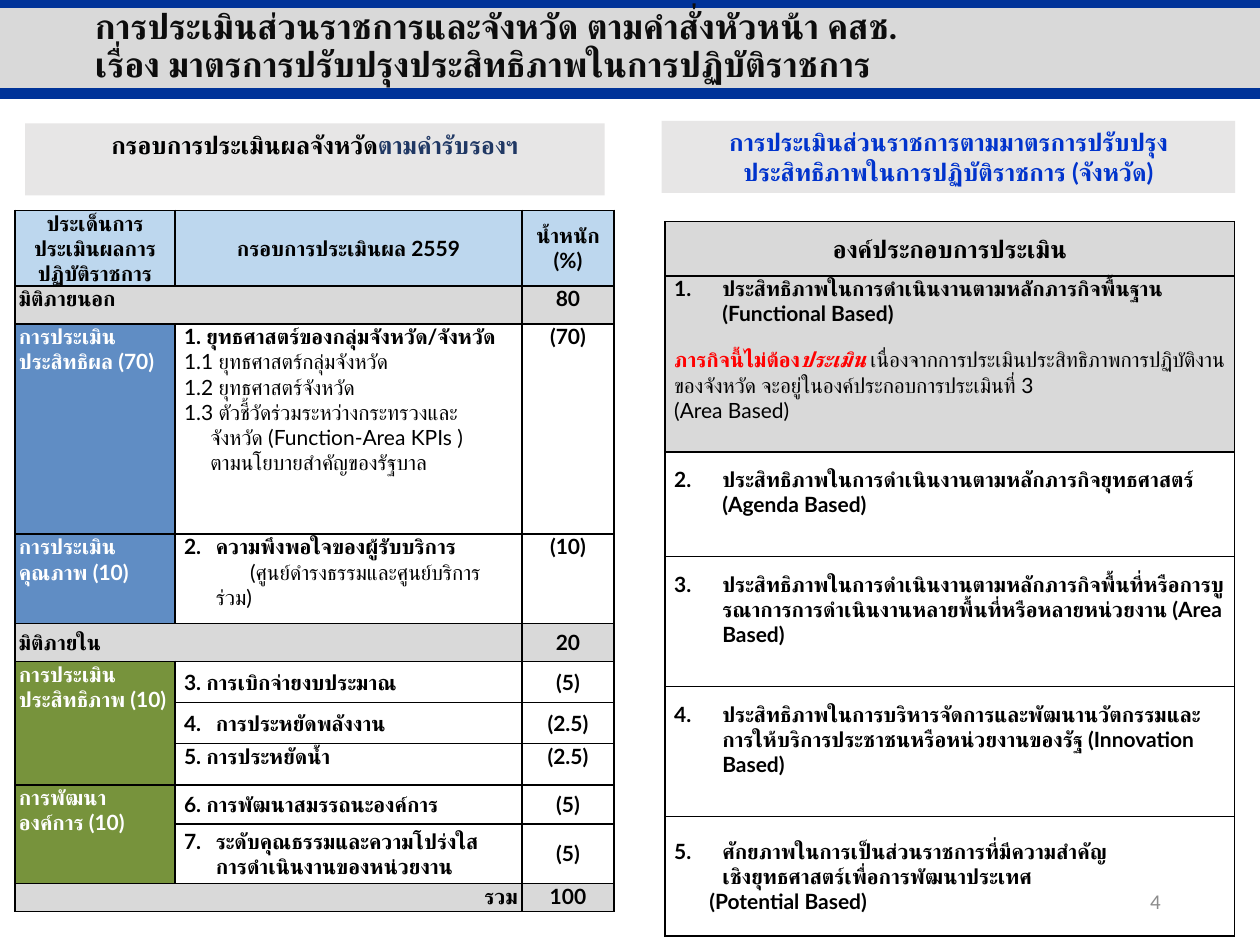
from lxml.etree import SubElement
from pptx import Presentation
from pptx.dml.color import RGBColor
from pptx.enum.shapes import MSO_CONNECTOR, MSO_SHAPE
from pptx.enum.text import MSO_ANCHOR, PP_ALIGN
from pptx.oxml.ns import qn
from pptx.util import Cm, Pt

BLACK = RGBColor(0x00, 0x00, 0x00)
WHITE = RGBColor(0xFF, 0xFF, 0xFF)
INK = RGBColor(0x0D, 0x0D, 0x0D)
RED = RGBColor(0xFF, 0x00, 0x00)
BAND_GREY = RGBColor(0xD9, 0xD9, 0xD9)
BOX_GREY = RGBColor(0xE7, 0xE6, 0xE6)
NUMBER_GREY = RGBColor(0x8C, 0x8C, 0x8C)
RULE_BLUE = RGBColor(0x00, 0x33, 0x99)
TITLE_BLUE = RGBColor(0x00, 0x33, 0xCC)
NAVY = RGBColor(0x20, 0x38, 0x64)
HEADER_BLUE = RGBColor(0xBD, 0xD7, 0xEE)
SIDE_BLUE = RGBColor(0x60, 0x8D, 0xC4)
SIDE_GREEN = RGBColor(0x77, 0x93, 0x3C)

TOP, MIDDLE = MSO_ANCHOR.TOP, MSO_ANCHOR.MIDDLE
LEFT, CENTER, RIGHT = PP_ALIGN.LEFT, PP_ALIGN.CENTER, PP_ALIGN.RIGHT
NARROW, WIDE = 0.08, 0.18


class SlideBuilder:
    font_name = "Lato"
    border_width = Pt(1)

    def __init__(self, slide):
        self.slide = slide

    def set_text(self, text_frame, items, size=12, color=BLACK, bold=True, align=LEFT):
        """Fill a frame; an item is a string or a dict with text and overrides.

        A dict may hold left, indent, number, before, bold, color, and more
        runs as (text, color, bold, italic).
        """
        for index, item in enumerate(items):
            item = item if isinstance(item, dict) else {"text": item}
            paragraph = text_frame.add_paragraph() if index else text_frame.paragraphs[0]
            paragraph.text = item["text"]
            paragraph.alignment = align
            if "before" in item:
                paragraph.space_before = Pt(item["before"])
            self.indent(paragraph, item)
            if not paragraph.runs:
                paragraph.add_run()
            for run in paragraph.runs:
                self.format_run(run, size, item.get("color", color), item.get("bold", bold))
            for text, run_color, run_bold, italic in item.get("more", []):
                run = paragraph.add_run()
                run.text = text
                self.format_run(run, size, run_color, run_bold, italic)
            for line_break in paragraph._p.findall(qn("a:br")):
                SubElement(line_break, qn("a:rPr")).set("sz", str(size * 100))

    def indent(self, paragraph, item):
        properties = paragraph._p.get_or_add_pPr()
        properties.set("marL", str(Cm(item.get("left", 0))))
        properties.set("indent", str(Cm(item.get("indent", 0))))
        if "number" in item:
            SubElement(properties, qn("a:buFont")).set("typeface", "Arial")
            numbering = SubElement(properties, qn("a:buAutoNum"))
            numbering.set("type", "arabicPeriod")
            numbering.set("startAt", str(item["number"]))

    def format_run(self, run, size, color, bold, italic=False):
        run.font.size = Pt(size)
        run.font.bold = bold
        run.font.italic = italic
        run.font.color.rgb = color
        run.font.name = self.font_name
        SubElement(run.font._element, qn("a:cs")).set("typeface", self.font_name)

    def title(self, text, left, top, width, height):
        title = self.slide.shapes.title
        title.left, title.top, title.width, title.height = map(Cm, (left, top, width, height))
        title.text_frame.vertical_anchor = MIDDLE
        self.set_text(title.text_frame, [{"text": text, "left": 0.97}], size=20, color=INK)
        title.text_frame.paragraphs[0].line_spacing = 0.9
        title.element.getparent().append(title.element)  # in front of the band

    def box(self, left, top, width, height, fill, items=()):
        shape = self.slide.shapes.add_shape(
            MSO_SHAPE.RECTANGLE, *map(Cm, (left, top, width, height)))
        shape.shadow.inherit = False
        shape.fill.solid()
        shape.fill.fore_color.rgb = fill
        shape.line.fill.background()
        shape.text_frame.word_wrap = True
        shape.text_frame.vertical_anchor = TOP
        if items:
            self.set_text(shape.text_frame, items, size=14, align=CENTER)

    def rule(self, top):
        line = self.slide.shapes.add_connector(
            MSO_CONNECTOR.STRAIGHT, Cm(0), Cm(top), Cm(25.4), Cm(top))
        line.line.color.rgb = RULE_BLUE
        line.line.width = Pt(6)
        SubElement(line._element.spPr, qn("a:effectLst"))

    def page_number(self, text, left, top, width, height):
        shape = self.slide.shapes.add_textbox(*map(Cm, (left, top, width, height)))
        shape.text_frame.word_wrap = True
        shape.text_frame.vertical_anchor = MIDDLE
        self.set_text(shape.text_frame, [text], color=NUMBER_GREY, bold=False, align=RIGHT)
        shape.text_frame.paragraphs[0].runs[0].font.name = "Calibri"

    def table(self, left, top, columns, rows):
        table = self.slide.shapes.add_table(
            len(rows), len(columns), Cm(left), Cm(top),
            Cm(sum(columns)), Cm(sum(rows))).table
        for column, width in zip(table.columns, columns):
            column.width = Cm(width)
        for row, height in zip(table.rows, rows):
            row.height = Cm(height)
        return table

    def cell(self, cell, items, fill=None, anchor=TOP, margin=WIDE, bottom=0,
             sides="LRTB", **style):
        cell.margin_left = cell.margin_right = Cm(margin)
        cell.margin_top, cell.margin_bottom = Cm(0), Cm(bottom)
        cell.vertical_anchor = anchor
        self.borders(cell, sides)
        if fill is None:
            cell.fill.background()
        else:
            cell.fill.solid()
            cell.fill.fore_color.rgb = fill
        self.set_text(cell.text_frame, items, **style)

    def borders(self, cell, sides):
        properties = cell._tc.get_or_add_tcPr()
        for side in "LRTB":
            line = SubElement(properties, qn(f"a:ln{side}"), w=str(self.border_width))
            if side in sides:
                fill = SubElement(line, qn("a:solidFill"))
                SubElement(fill, qn("a:srgbClr")).set("val", str(BLACK))
            else:
                SubElement(line, qn("a:noFill"))


def numbered(number, text, hanging):
    return {"text": text, "number": number, "left": hanging, "indent": -hanging}


def province_table(builder):
    table = builder.table(0.3, 4.24, [3.23, 6.99, 1.86],
                          [1.52, 0.56, 4.24, 1.8, 0.56, 0.83, 0.83, 0.83, 0.79, 1.2, 0.56])
    for first, last in [((5, 0), (7, 0)), ((8, 0), (9, 0)), ((10, 0), (10, 1))]:
        table.cell(*first).merge(table.cell(*last))

    headers = [["ประเด็นการประเมินผลการปฏิบัติราชการ"], ["กรอบการประเมินผล 2559"],
               ["น้ำหนัก", "(%)"]]
    for column, items in enumerate(headers):
        builder.cell(table.cell(0, column), items, HEADER_BLUE, MIDDLE, NARROW, align=CENTER)

    for row, text, weight, anchor in [(1, "มิติภายนอก", "80", TOP),
                                      (4, "มิติภายใน", "20", MIDDLE)]:
        builder.cell(table.cell(row, 0), [text], BAND_GREY, anchor, NARROW, sides="LTB")
        builder.cell(table.cell(row, 1), [""], BAND_GREY, sides="RTB")
        builder.cell(table.cell(row, 2), [weight], BAND_GREY, anchor, NARROW, align=CENTER)

    for row, text, fill in [(2, "การประเมินประสิทธิผล (70)", SIDE_BLUE),
                            (3, "การประเมินคุณภาพ (10)", SIDE_BLUE),
                            (5, "การประเมินประสิทธิภาพ (10)", SIDE_GREEN),
                            (8, "การพัฒนาองค์การ (10)", SIDE_GREEN)]:
        builder.cell(table.cell(row, 0), [text], fill, margin=NARROW, color=WHITE)

    strategies = ["1. ยุทธศาสตร์ของกลุ่มจังหวัด/จังหวัด"]
    strategies += [{"text": text, "left": left, "bold": False} for text, left in [
        ("1.1 ยุทธศาสตร์กลุ่มจังหวัด", 0),
        ("1.2 ยุทธศาสตร์จังหวัด", 0),
        ("1.3 ตัวชี้วัดร่วมระหว่างกระทรวงและ", 0),
        ("จังหวัด (Function-Area KPIs )", 0.53),
        ("ตามนโยบายสำคัญของรัฐบาล", 0.53)]]
    satisfaction = [numbered(2, "ความพึงพอใจของผู้รับบริการ", 0.64),
                    {"text": "(ศูนย์ดำรงธรรมและศูนย์บริการร่วม)", "left": 0.64,
                     "indent": 0.69, "bold": False}]
    integrity = "ระดับคุณธรรมและความโปร่งใส\nการดำเนินงานของหน่วยงาน"
    for row, items, weight, anchor in [
            (2, strategies, "(70)", TOP),
            (3, satisfaction, "(10)", TOP),
            (5, ["3. การเบิกจ่ายงบประมาณ"], "(5)", MIDDLE),
            (6, [numbered(4, "การประหยัดพลังงาน", 0.64)], "(2.5)", MIDDLE),
            (7, ["5. การประหยัดน้ำ"], "(2.5)", TOP),
            (8, ["6. การพัฒนาสมรรถนะองค์การ"], "(5)", MIDDLE),
            (9, [numbered(7, integrity, 0.64)], "(5)", MIDDLE)]:
        builder.cell(table.cell(row, 1), items, WHITE, anchor)
        builder.cell(table.cell(row, 2), [weight], WHITE, anchor, align=CENTER)

    builder.cell(table.cell(10, 0), ["รวม"], BAND_GREY, margin=NARROW, align=RIGHT)
    builder.cell(table.cell(10, 2), ["100"], BAND_GREY, margin=NARROW, align=CENTER)


def component_table(builder):
    table = builder.table(13.41, 4.47, [11.48], [1.09, 3.55, 2.11, 2.62, 2.62, 2.41])
    builder.cell(table.cell(0, 0), ["องค์ประกอบการประเมิน"], BAND_GREY, MIDDLE,
                 size=14, align=CENTER)
    exempt = {"text": "ภารกิจนี้ไม่ต้อง", "color": RED, "before": 12, "more": [
        ("ประเมิน ", RED, True, True),
        ("เนื่องจากการประเมินประสิทธิภาพการปฏิบัติงานของจังหวัด "
         "จะอยู่ในองค์ประกอบการประเมินที่ 3", BLACK, False, False)]}
    functional = "ประสิทธิภาพในการดำเนินงานตามหลักภารกิจพื้นฐาน (Functional Based)"
    builder.cell(table.cell(1, 0), [numbered(1, functional, 0.97), exempt,
                                    {"text": "(Area Based)", "bold": False}], BAND_GREY)

    potential = "ศักยภาพในการเป็นส่วนราชการที่มีความสำคัญ\nเชิงยุทธศาสตร์เพื่อการพัฒนาประเทศ"
    for number, text, bottom, rest in [
            (2, "ประสิทธิภาพในการดำเนินงานตามหลักภารกิจยุทธศาสตร์ (Agenda Based)", 0.5, []),
            (3, "ประสิทธิภาพในการดำเนินงานตามหลักภารกิจพื้นที่หรือการบูรณาการ"
                "การดำเนินงานหลายพื้นที่หรือหลายหน่วยงาน (Area Based)", 0.5, []),
            (4, "ประสิทธิภาพในการบริหารจัดการและพัฒนานวัตกรรมและ"
                "การให้บริการประชาชนหรือหน่วยงานของรัฐ (Innovation Based)", 0.5, []),
            (5, potential, 0, [{"text": "(Potential Based)", "left": 0.71}])]:
        builder.cell(table.cell(number, 0), [numbered(number, text, 0.97), *rest],
                     anchor=MIDDLE, bottom=bottom)


def main():
    presentation = Presentation()
    presentation.slide_width, presentation.slide_height = Cm(25.4), Cm(19.05)
    builder = SlideBuilder(presentation.slides.add_slide(presentation.slide_layouts[5]))

    builder.box(0, 0.13, 25.4, 1.73, BAND_GREY)
    for top in (1.88, 0.05):
        builder.rule(top)
    builder.title("การประเมินส่วนราชการและจังหวัด ตามคำสั่งหัวหน้า คสช.\n"
                  "เรื่อง มาตรการปรับปรุงประสิทธิภาพในการปฏิบัติราชการ",
                  0.69, 0.05, 22.73, 1.8)
    component_table(builder)
    builder.page_number("4", 17.93, 17.65, 5.72, 1.02)
    builder.box(13.34, 2.44, 11.56, 1.45, BOX_GREY, [
        {"text": "การประเมินส่วนราชการตามมาตรการปรับปรุงประสิทธิภาพในการปฏิบัติราชการ (จังหวัด)",
         "color": TITLE_BLUE}])
    builder.box(0.51, 2.49, 11.68, 1.45, BOX_GREY, [
        {"text": "กรอบการประเมินผลจังหวัด", "more": [("ตามคำรับรองฯ", NAVY, True, False)]}])
    province_table(builder)
    presentation.save("out.pptx")


if __name__ == "__main__":
    main()
